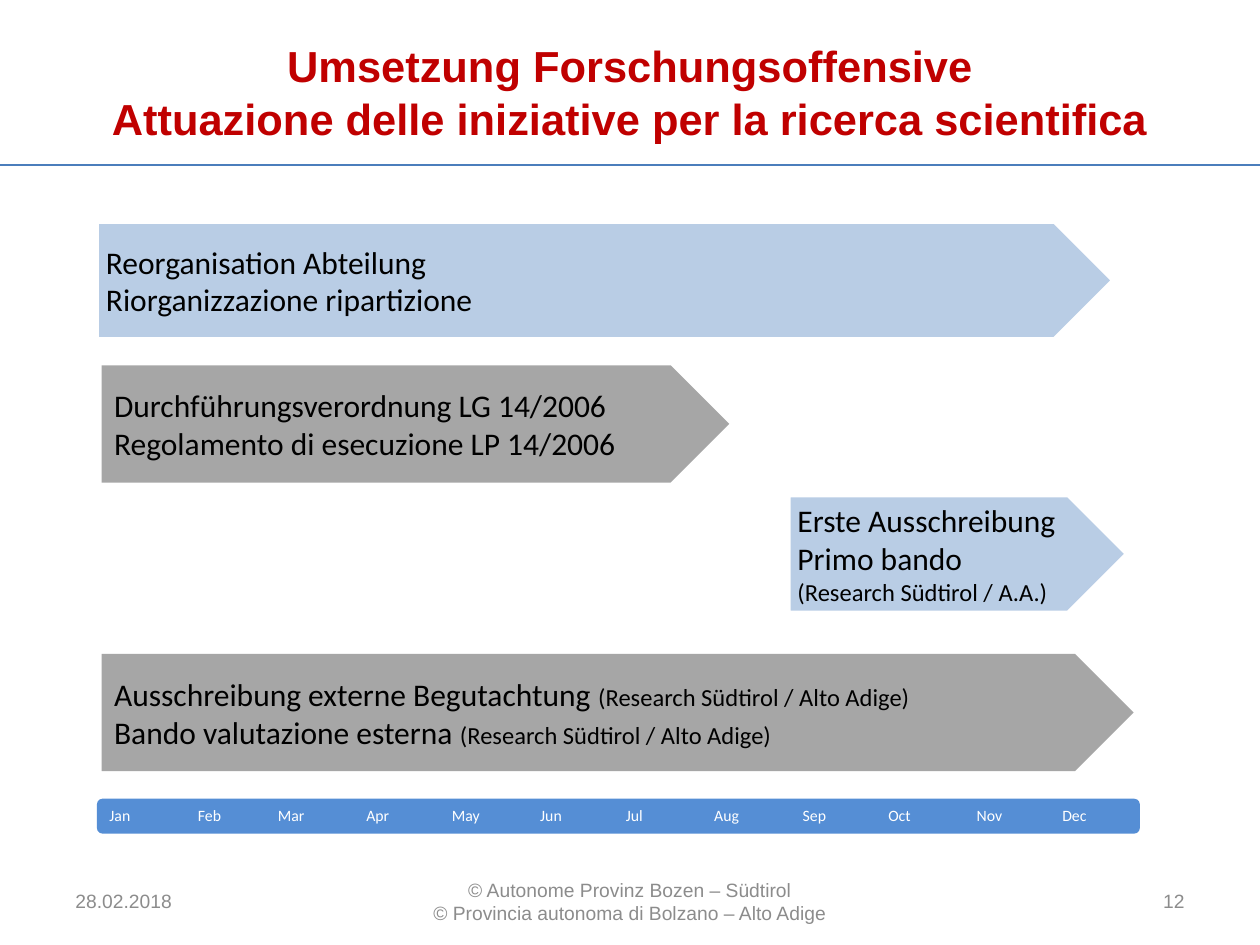
"""Build the research initiative timeline slide."""
from dataclasses import dataclass
from itertools import accumulate
from typing import Optional

from lxml import etree
from pptx import Presentation
from pptx.dml.color import RGBColor
from pptx.enum import shapes, text
from pptx.oxml.ns import qn
from pptx.util import Pt


@dataclass(frozen=True)
class Theme:
    red: str = "C00000"
    rule: str = "4B7EBC"
    bar: str = "558ED5"
    blue: str = "B9CDE5"
    grey: str = "A6A6A6"
    footer: str = "8C8C8C"
    black: str = "000000"
    white: str = "FFFFFF"
    heading_font: str = "Arial"
    body_font: str = "Calibri"
    title_size: float = 24.8
    body_size: float = 18
    note_size: float = 14
    footer_size: float = 11
    month_size: float = 9


@dataclass(frozen=True)
class Box:
    left: float
    top: float
    width: float
    height: float

    def lengths(self) -> tuple:
        return tuple(Pt(v) for v in (self.left, self.top, self.width, self.height))


@dataclass(frozen=True)
class Phase:
    box: Box
    fill: str
    lines: tuple
    outline: Optional[str] = None
    inset: Optional[float] = None


@dataclass(frozen=True)
class Month:
    name: str
    days: int
    width: float


@dataclass(frozen=True)
class Footer:
    box: Box
    content: str
    alignment: text.PP_ALIGN


THEME = Theme()
NOTE = "(Research Südtirol / Alto Adige)"
PHASES = (
    Phase(Box(55.6, 126.9, 580.3, 66.7), THEME.blue,
          (("Reorganisation Abteilung", ""), ("Riorganizzazione ripartizione", "")),
          THEME.white, 5),
    Phase(Box(58.1, 208.8, 358.6, 67), THEME.grey,
          (("Durchführungsverordnung LG 14/2006", ""),
           ("Regolamento di esecuzione LP 14/2006", ""))),
    Phase(Box(58.1, 373.7, 589.7, 67), THEME.grey,
          (("Ausschreibung externe Begutachtung ", NOTE),
           ("Bando valutazione esterna ", NOTE))),
    Phase(Box(450.7, 283.2, 193, 66.7), THEME.blue,
          (("Erste Ausschreibung", ""), ("Primo bando", ""),
           ("", "(Research Südtirol / A.A.)")),
          THEME.white, 5),
)
MONTHS = (
    Month("Jan", 31, 12.2), Month("Feb", 28, 13.7), Month("Mar", 31, 15.1),
    Month("Apr", 30, 13), Month("May", 31, 16.6), Month("Jun", 30, 12.2),
    Month("Jul", 31, 10.1), Month("Aug", 31, 14.4), Month("Sep", 30, 13.7),
    Month("Oct", 31, 13), Month("Nov", 30, 15.1), Month("Dec", 31, 13.7),
)
YEAR_START = 62.6
POINTS_PER_DAY = 1.63
FOOTERS = (
    Footer(Box(36, 500.5, 168, 28.75), "28.02.2018", text.PP_ALIGN.LEFT),
    Footer(Box(235.5, 500.5, 249, 28.75),
           "© Autonome Provinz Bozen – Südtirol\n"
           "© Provincia autonoma di Bolzano – Alto Adige", text.PP_ALIGN.CENTER),
    Footer(Box(516, 500.5, 168, 28.75), "12", text.PP_ALIGN.RIGHT),
)


def style_font(font, name: str, size: float, color: str, bold: bool = False) -> None:
    font.name = name
    font.size = Pt(size)
    font.bold = bold
    font.color.rgb = RGBColor.from_string(color)


def set_margins(frame, inset: float) -> None:
    frame.margin_left = frame.margin_right = Pt(inset)
    frame.margin_top = frame.margin_bottom = Pt(inset)


def add_filled(slide, kind, box: Box, fill: str, outline: Optional[str] = None):
    shape = slide.shapes.add_shape(kind, *box.lengths())
    shape.shadow.inherit = False
    shape.fill.solid()
    shape.fill.fore_color.rgb = RGBColor.from_string(fill)
    if outline:
        shape.line.color.rgb = RGBColor.from_string(outline)
        shape.line.width = Pt(2)
    else:
        shape.line.fill.background()
    return shape


def add_title(slide) -> None:
    title = slide.shapes.title
    title.left, title.top, title.width, title.height = Box(36, 21.6, 648, 90).lengths()
    frame = title.text_frame
    frame.text = ("Umsetzung Forschungsoffensive\v"
                  "Attuazione delle iniziative per la ricerca scientifica")
    frame.auto_size = text.MSO_AUTO_SIZE.NONE
    frame.vertical_anchor = text.MSO_ANCHOR.MIDDLE
    frame.margin_bottom = Pt(32)
    paragraph = frame.paragraphs[0]
    paragraph.alignment = text.PP_ALIGN.CENTER
    for run in paragraph.runs:
        style_font(run.font, THEME.heading_font, THEME.title_size, THEME.red, True)


def add_rule(slide) -> None:
    rule = slide.shapes.add_connector(
        shapes.MSO_CONNECTOR.STRAIGHT, Pt(0), Pt(94.2), Pt(720), Pt(94.2))
    rule.line.color.rgb = RGBColor.from_string(THEME.rule)
    rule.line.width = Pt(1)
    etree.SubElement(rule._element.spPr, qn("a:effectLst"))


def add_months(slide) -> None:
    add_filled(slide, shapes.MSO_SHAPE.ROUNDED_RECTANGLE,
               Box(55.4, 456.4, 596, 20), THEME.bar)
    elapsed = accumulate((month.days for month in MONTHS), initial=0)
    for month, days in zip(MONTHS, elapsed):
        box = Box(YEAR_START + days * POINTS_PER_DAY, 460.2, month.width, 11)
        label = add_filled(slide, shapes.MSO_SHAPE.RECTANGLE, box, THEME.bar)
        frame = label.text_frame
        frame.text = month.name
        frame.word_wrap = False
        frame.vertical_anchor = text.MSO_ANCHOR.MIDDLE
        set_margins(frame, 0)
        paragraph = frame.paragraphs[0]
        paragraph.alignment = text.PP_ALIGN.LEFT
        style_font(paragraph.runs[0].font, THEME.body_font, THEME.month_size, THEME.white)


def add_footer(slide, footer: Footer) -> None:
    frame = slide.shapes.add_textbox(*footer.box.lengths()).text_frame
    frame.word_wrap = True
    frame.vertical_anchor = text.MSO_ANCHOR.MIDDLE
    frame.text = footer.content
    for paragraph in frame.paragraphs:
        paragraph.alignment = footer.alignment
        style_font(paragraph.runs[0].font, THEME.heading_font, THEME.footer_size, THEME.footer)


def add_phase(slide, phase: Phase) -> None:
    arrow = add_filled(slide, shapes.MSO_SHAPE.PENTAGON, phase.box, phase.fill, phase.outline)
    frame = arrow.text_frame
    frame.word_wrap = True
    frame.vertical_anchor = text.MSO_ANCHOR.MIDDLE
    if phase.inset is not None:
        set_margins(frame, phase.inset)
    for index, line in enumerate(phase.lines):
        paragraph = frame.add_paragraph() if index else frame.paragraphs[0]
        paragraph.alignment = text.PP_ALIGN.LEFT
        for content, size in zip(line, (THEME.body_size, THEME.note_size)):
            if content:
                run = paragraph.add_run()
                run.text = content
                style_font(run.font, THEME.body_font, size, THEME.black)


def main() -> None:
    presentation = Presentation()
    presentation.slide_width, presentation.slide_height = Pt(720), Pt(540)
    slide = presentation.slides.add_slide(presentation.slide_layouts[5])
    add_rule(slide)
    add_title(slide)
    add_months(slide)
    for footer in FOOTERS:
        add_footer(slide, footer)
    for phase in PHASES:
        add_phase(slide, phase)
    presentation.save("out.pptx")


if __name__ == "__main__":
    main()
